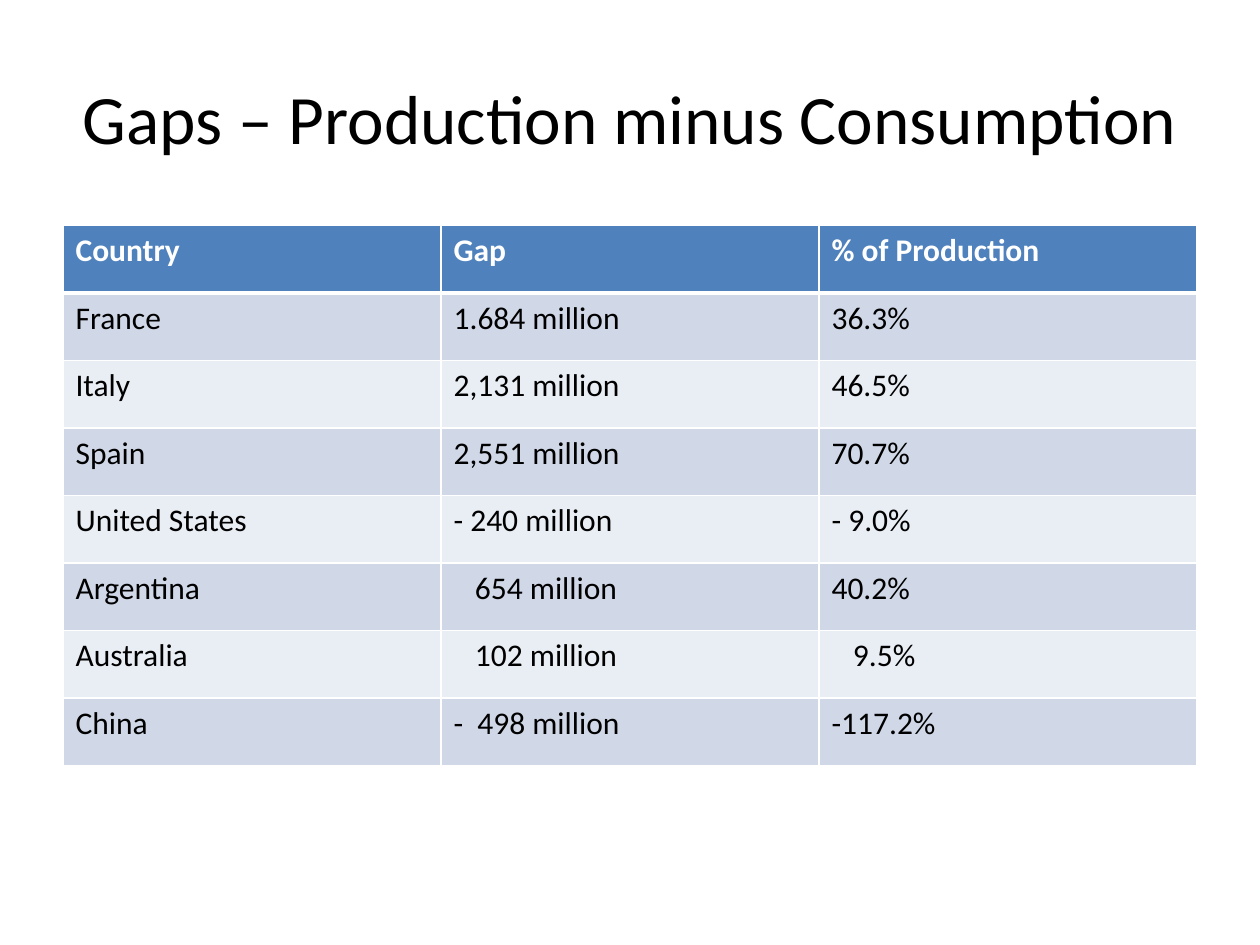
from lxml import etree
from pptx import Presentation
from pptx.dml.color import RGBColor
from pptx.enum.text import MSO_ANCHOR, MSO_AUTO_SIZE, PP_ALIGN
from pptx.oxml.ns import qn
from pptx.util import Pt

CENTER = PP_ALIGN.CENTER
MIDDLE = MSO_ANCHOR.MIDDLE
NO_AUTOFIT = MSO_AUTO_SIZE.NONE

FONT = "Calibri"
BLACK, WHITE = "000000", "FFFFFF"
HEADER_FILL = "4F81BD"
BAND_FILLS = ("D0D8E8", "E9EDF4")

LEFT, WIDTH = 36, 648
TABLE_TOP, ROW_HEIGHT = 128.9, 38.6
CELL_MARGIN = 7.2
UNSIGNED_INDENT = 12.2
THIN, THICK = 1, 3

HEADINGS = ("Country", "Gap", "% of Production")
GAPS = (
    ("France", "1.684 million", "36.3%"),
    ("Italy", "2,131 million", "46.5%"),
    ("Spain", "2,551 million", "70.7%"),
    ("United States", "- 240 million", "- 9.0%"),
    ("Argentina", "654 million", "40.2%"),
    ("Australia", "102 million", "9.5%"),
    ("China", "-  498 million", "-117.2%"),
)
INDENTED = {"654 million", "102 million", "9.5%"}


def rgb(hex_color):
    return RGBColor.from_string(hex_color)


def add_run(paragraph, text, size, color, bold=False):
    run = paragraph.add_run()
    run.text = text
    run.font.name = FONT
    run.font.size = Pt(size)
    run.font.bold = bold
    run.font.color.rgb = rgb(color)


def add_title(slide, text):
    title = slide.shapes.title
    title.left, title.top = Pt(LEFT), Pt(21.6)
    title.width, title.height = Pt(WIDTH), Pt(90)
    frame = title.text_frame
    frame.word_wrap = True
    frame.auto_size = NO_AUTOFIT
    frame.vertical_anchor = MIDDLE
    paragraph = frame.paragraphs[0]
    paragraph.alignment = CENTER
    add_run(paragraph, text, 39.6, BLACK)


def set_borders(cell, top, bottom):
    """Draw white cell borders; the side borders are thin."""
    properties = cell._tc.get_or_add_tcPr()
    edges = (("a:lnL", THIN), ("a:lnR", THIN), ("a:lnT", top), ("a:lnB", bottom))
    for position, (tag, width) in enumerate(edges):
        line = etree.Element(qn(tag), w=str(Pt(width)))
        fill = etree.SubElement(line, qn("a:solidFill"))
        etree.SubElement(fill, qn("a:srgbClr"), val=WHITE)
        properties.insert(position, line)


def fill_cell(cell, text, row):
    is_header = row == 0
    cell.fill.solid()
    cell.fill.fore_color.rgb = rgb(
        HEADER_FILL if is_header else BAND_FILLS[(row - 1) % 2])
    indent = UNSIGNED_INDENT if text in INDENTED else 0
    cell.margin_left = Pt(CELL_MARGIN + indent)
    add_run(cell.text_frame.paragraphs[0], text, 18,
            WHITE if is_header else BLACK, bold=is_header)
    set_borders(cell, top=THICK if row == 1 else THIN,
                bottom=THICK if is_header else THIN)


def add_gap_table(slide):
    rows = (HEADINGS, *GAPS)
    table = slide.shapes.add_table(
        len(rows), len(HEADINGS), Pt(LEFT), Pt(TABLE_TOP),
        Pt(WIDTH), Pt(ROW_HEIGHT * len(rows))).table
    for row, texts in enumerate(rows):
        table.rows[row].height = Pt(ROW_HEIGHT)
        for column, text in enumerate(texts):
            fill_cell(table.cell(row, column), text, row)


def main():
    presentation = Presentation()
    presentation.slide_width, presentation.slide_height = Pt(720), Pt(540)
    title_only = presentation.slide_layouts[5]
    slide = presentation.slides.add_slide(title_only)
    add_title(slide, "Gaps – Production minus Consumption")
    add_gap_table(slide)
    presentation.save("out.pptx")


if __name__ == "__main__":
    main()
